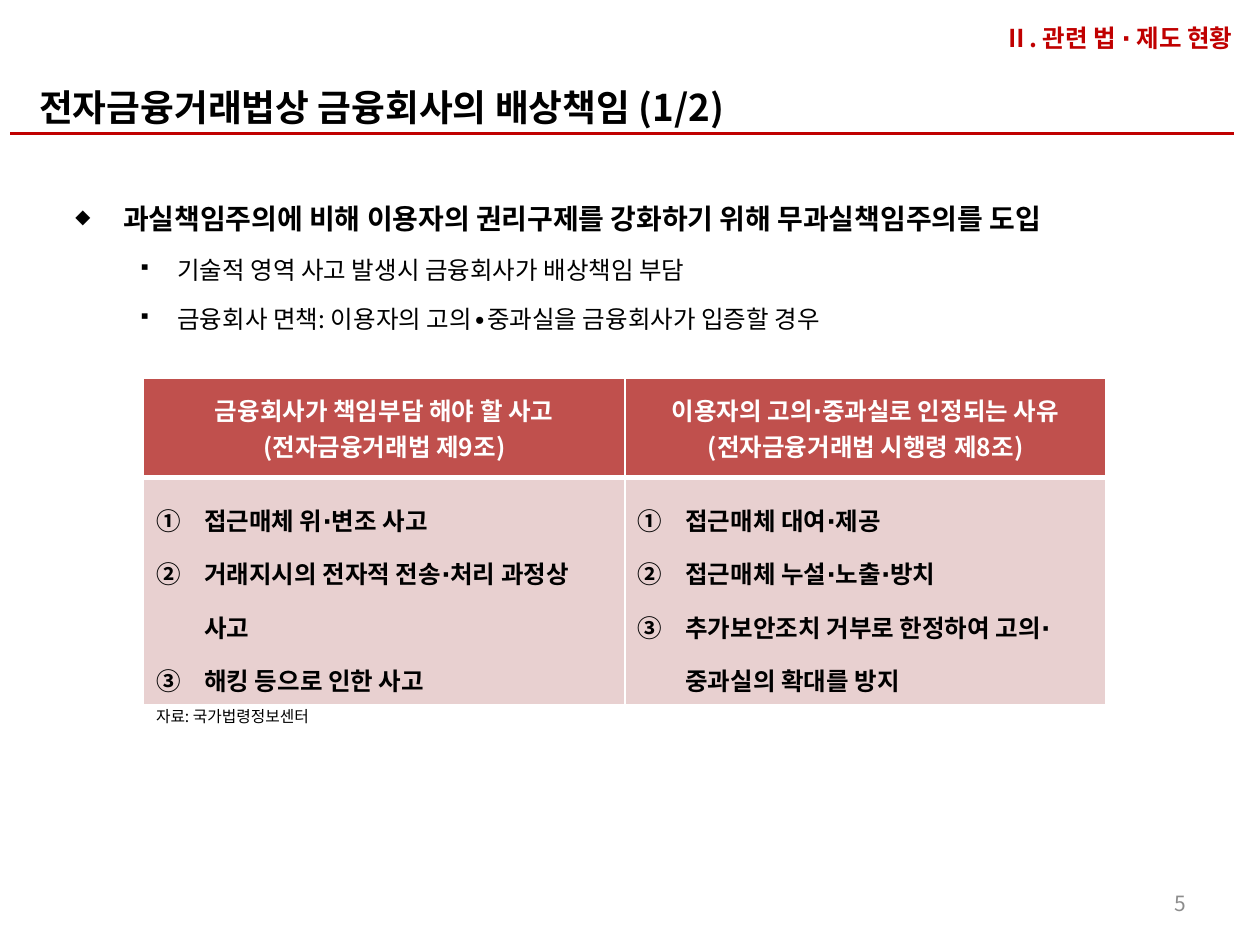
from lxml import etree
from pptx import Presentation
from pptx import util as u
from pptx.dml.color import RGBColor
from pptx.enum import shapes, text
from pptx.oxml import ns

FONT = "Noto Sans CJK KR"
RED = RGBColor(0xC0, 0x00, 0x00)
HEAD = RGBColor(0xC0, 0x50, 0x4D)
PINK = RGBColor(0xE8, 0xD0, 0xD0)
BLACK = RGBColor(0, 0, 0)
WHITE = RGBColor(255, 255, 255)
GRAY = RGBColor(0x8C, 0x8C, 0x8C)

ALIGN = text.PP_ALIGN
MID = text.MSO_ANCHOR.MIDDLE


def sub(parent, tag, **attrs):
    return etree.SubElement(parent, ns.qn(tag), attrs)


def write(frame, words, size=14, color=BLACK, bold=False, align=ALIGN.LEFT,
          bullet=None, number=None, left=0, hang=0, space=None, before=0):
    """Add one paragraph, using the empty first one if there is one."""
    first = frame.paragraphs[0]
    fresh = not first.runs
    para = first if fresh else frame.add_paragraph()
    para.alignment = align
    if space:
        para.line_spacing = space
    if before and not fresh:
        para.space_before = u.Pt(before)
    if bullet or number:
        props = para._p.get_or_add_pPr()
        props.set("marL", str(u.Inches(left)))
        props.set("indent", str(-u.Inches(hang)))
        if bullet:
            sub(props, "a:buSzPct", val="70000")
            sub(props, "a:buChar", char=bullet)
        else:
            sub(props, "a:buAutoNum", type=number)
    run = para.add_run()
    run.text = words
    font = run.font
    font.size, font.bold, font.name = u.Pt(size), bold, FONT
    font.color.rgb = color
    props = run._r.get_or_add_rPr()
    props.set("kern", "0")
    sub(props, "a:ea", typeface=FONT)


class Deck:
    def __init__(self):
        self.prs = Presentation()
        self.prs.slide_width = u.Inches(10)
        self.prs.slide_height = u.Inches(7.5)
        self.slide = self.prs.slides.add_slide(self.prs.slide_layouts[5])

    def title(self, words, box, **style):
        shape = self.slide.shapes.title
        shape.left, shape.top, shape.width, shape.height = map(u.Inches, box)
        frame = shape.text_frame
        frame.auto_size = text.MSO_AUTO_SIZE.NONE
        frame.vertical_anchor = MID
        write(frame, words, **style)

    def label(self, box, anchor=text.MSO_ANCHOR.TOP):
        shape = self.slide.shapes.add_textbox(*map(u.Inches, box))
        frame = shape.text_frame
        frame.word_wrap = True
        frame.vertical_anchor = anchor
        return frame

    def rule(self, x1, x2, y, color, width):
        line = self.slide.shapes.add_connector(
            shapes.MSO_CONNECTOR.STRAIGHT, *map(u.Inches, (x1, y, x2, y)))
        line.line.color.rgb = color
        line.line.width = u.Pt(width)
        sub(line._element.spPr, "a:effectLst")

    def border(self, cell, **widths):
        props = cell._tc.get_or_add_tcPr()
        for side in "LRTB":
            line = sub(props, "a:ln" + side, w=str(u.Pt(widths.get(side, 1))))
            fill = sub(line, "a:solidFill")
            sub(fill, "a:srgbClr", val=str(WHITE))

    def table(self, box, heights, heads, lists):
        frame = self.slide.shapes.add_table(
            2, len(heads), *map(u.Inches, (*box, sum(heights))))
        grid = frame.table
        for row, height in zip(grid.rows, heights):
            row.height = u.Inches(height)
        for col, (head, items) in enumerate(zip(heads, lists)):
            top, body = grid.cell(0, col), grid.cell(1, col)
            self.border(top, B=3)
            self.border(body, T=3)
            for cell, color in ((top, HEAD), (body, PINK)):
                cell.fill.solid()
                cell.fill.fore_color.rgb = color
                cell.vertical_anchor = MID
            for line in head:
                write(top.text_frame, line, color=WHITE, bold=True,
                      align=ALIGN.CENTER)
            for item in items:
                write(body.text_frame, item, bold=True, space=1.5,
                      number="circleNumDbPlain", left=0.38, hang=0.38)


def main():
    deck = Deck()

    # Heading
    deck.title("전자금융거래법상 금융회사의 배상책임 (1/2)",
               (0.21, 0.51, 8.62, 0.68), size=21, bold=True)
    write(deck.label((5.79, 0.13, 4.09, 0.31)), "Ⅱ. 관련 법 ∙ 제도 현황",
          color=RED, bold=True, align=ALIGN.RIGHT)
    deck.rule(0.08, 9.79, 1.06, RED, 1.5)

    # Main points
    body = deck.label((0.5, 1.42, 9, 1.5))
    write(body, "과실책임주의에 비해 이용자의 권리구제를 강화하기 위해 무과실책임주의를 도입",
          size=16, bold=True, bullet="◆", left=0.38, hang=0.38, space=1.5)
    for point in ("기술적 영역 사고 발생시 금융회사가 배상책임 부담",
                  "금융회사 면책: 이용자의 고의∙중과실을 금융회사가 입증할 경우"):
        write(body, point, bullet="▪", left=0.81, hang=0.31, space=1.5,
              before=2.8)

    # Liability table and its source
    deck.table(
        (1.14, 3, 7.64), (0.79, 1.8),
        [("금융회사가 책임부담 해야 할 사고", "(전자금융거래법 제9조)"),
         ("이용자의 고의∙중과실로 인정되는 사유", "(전자금융거래법 시행령 제8조)")],
        [("접근매체 위∙변조 사고",
          "거래지시의 전자적 전송∙처리 과정상 사고",
          "해킹 등으로 인한 사고"),
         ("접근매체 대여∙제공",
          "접근매체 누설∙노출∙방치",
          "추가보안조치 거부로 한정하여 고의∙중과실의 확대를 방지")])
    write(deck.label((1.14, 5.56, 2.13, 0.25)), "자료: 국가법령정보센터", size=9)

    # Page number
    write(deck.label((7.18, 6.97, 2.33, 0.4), MID), "5", size=12, color=GRAY,
          align=ALIGN.RIGHT)

    deck.prs.save("out.pptx")


if __name__ == "__main__":
    main()
